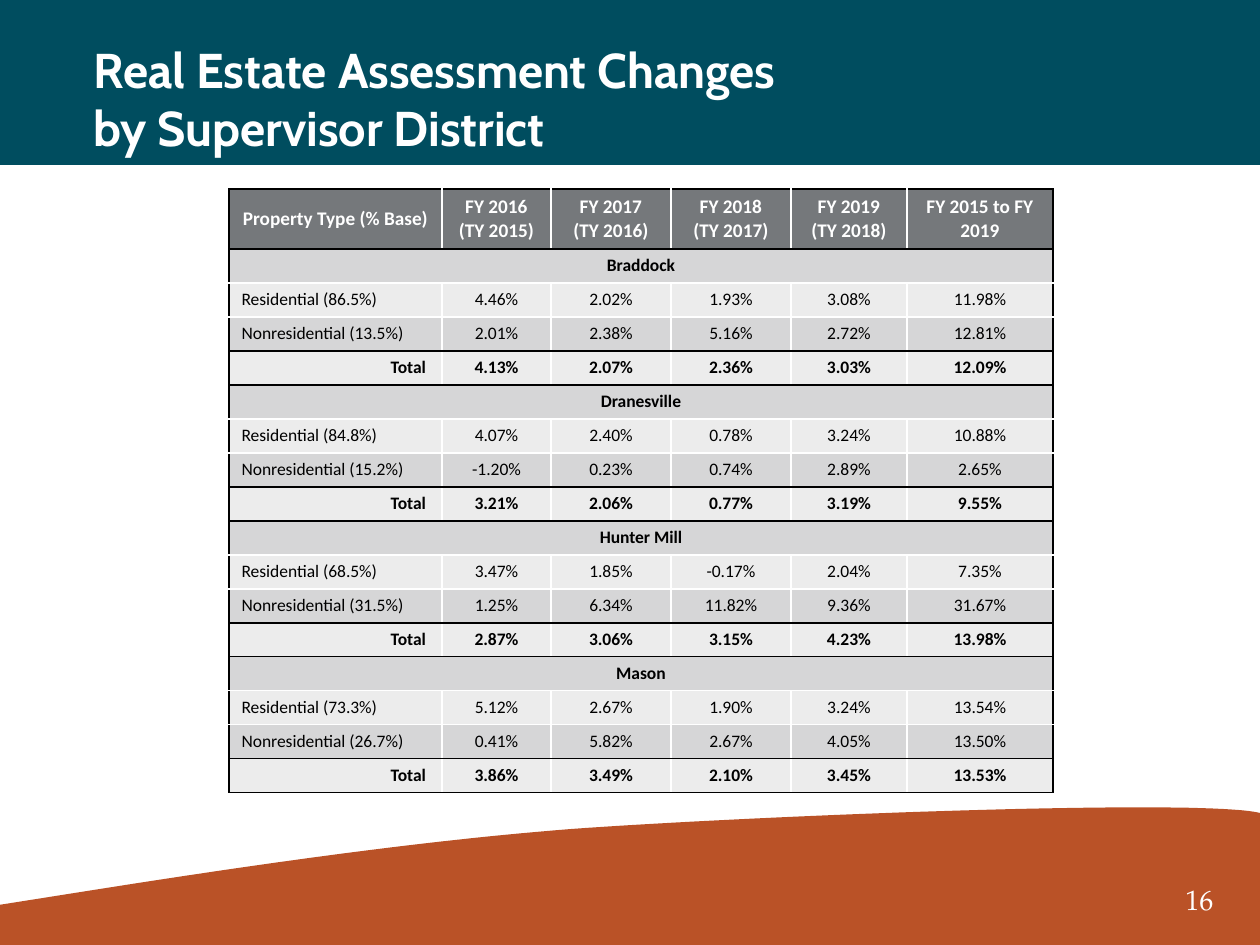
import dataclasses
import typing

import lxml.etree
import pptx
import pptx.dml.color
import pptx.enum.shapes
import pptx.enum.text
import pptx.oxml.ns
import pptx.util

EMU_PER_PX = pptx.util.Inches(1) / 126
ALIGN = pptx.enum.text.PP_ALIGN
MIDDLE = pptx.enum.text.MSO_ANCHOR.MIDDLE
TOP = pptx.enum.text.MSO_ANCHOR.TOP

WHITE, BLACK = "FFFFFF", "000000"
TEAL, RUST = "004D5F", "BA5227"
HEADER_GRAY, DARK_BAND, LIGHT_BAND = "75787B", "D6D6D7", "ECECEC"


@dataclasses.dataclass(frozen=True)
class District:
    name: str
    residential_share: str
    nonresidential_share: str
    residential: str
    nonresidential: str
    total: str


@dataclasses.dataclass(frozen=True)
class RowStyle:
    fill: str
    color: str
    size: int
    bold: bool
    label_align: typing.Any
    top: str
    bottom: str
    height: int = 34


HEADER = RowStyle(HEADER_GRAY, WHITE, 11, True, ALIGN.CENTER, BLACK, BLACK, 60)
NAME = RowStyle(DARK_BAND, BLACK, 10, True, ALIGN.CENTER, BLACK, WHITE)
RESIDENTIAL = RowStyle(LIGHT_BAND, BLACK, 10, False, ALIGN.LEFT, WHITE, WHITE)
NONRESIDENTIAL = RowStyle(DARK_BAND, BLACK, 10, False, ALIGN.LEFT, WHITE, BLACK)
TOTAL = RowStyle(LIGHT_BAND, BLACK, 10, True, ALIGN.RIGHT, BLACK, BLACK)

COLUMN_WIDTHS = [213, 109, 120, 120, 116, 146]
HEADINGS = ["Property Type (% Base)", "FY 2016\n(TY 2015)", "FY 2017\n(TY 2016)",
            "FY 2018\n(TY 2017)", "FY 2019\n(TY 2018)", "FY 2015 to FY 2019"]
DISTRICTS = [
    District("Braddock", "86.5%", "13.5%", "4.46% 2.02% 1.93% 3.08% 11.98%",
             "2.01% 2.38% 5.16% 2.72% 12.81%", "4.13% 2.07% 2.36% 3.03% 12.09%"),
    District("Dranesville", "84.8%", "15.2%", "4.07% 2.40% 0.78% 3.24% 10.88%",
             "-1.20% 0.23% 0.74% 2.89% 2.65%", "3.21% 2.06% 0.77% 3.19% 9.55%"),
    District("Hunter Mill", "68.5%", "31.5%", "3.47% 1.85% -0.17% 2.04% 7.35%",
             "1.25% 6.34% 11.82% 9.36% 31.67%", "2.87% 3.06% 3.15% 4.23% 13.98%"),
    District("Mason", "73.3%", "26.7%", "5.12% 2.67% 1.90% 3.24% 13.54%",
             "0.41% 5.82% 2.67% 4.05% 13.50%", "3.86% 3.49% 2.10% 3.45% 13.53%"),
]

WAVE_CURVES = [
    [(1260, 813), (1203, 799), (796, 814), (586, 828)],
    [(586, 828), (377, 843), (127, 885), (-1, 905)],
]


def px(length: float) -> int:
    return round(length * EMU_PER_PX)


def rgb(color: str) -> pptx.dml.color.RGBColor:
    return pptx.dml.color.RGBColor.from_string(color)


def paint(shape, color: str) -> None:
    shape.fill.solid()
    shape.fill.fore_color.rgb = rgb(color)
    shape.line.fill.background()
    shape.shadow.inherit = False


def format_text(text_frame, font: str, size: float, color: str, bold: bool, align) -> None:
    for paragraph in text_frame.paragraphs:
        paragraph.alignment = align
        for run in paragraph.runs:
            run.font.name = font
            run.font.size = pptx.util.Pt(size)
            run.font.bold = bold
            run.font.color.rgb = rgb(color)


def curve_points(curve, steps: int = 40) -> list:
    """Sample a cubic Bezier curve, leaving out its first point."""
    points = []
    for step in range(1, steps + 1):
        t = step / steps
        weights = ((1 - t) ** 3, 3 * t * (1 - t) ** 2, 3 * t * t * (1 - t), t ** 3)
        points.append(tuple(px(sum(weight * point[axis] for weight, point in zip(weights, curve)))
                            for axis in (0, 1)))
    return points


def add_wave(slide) -> None:
    builder = slide.shapes.build_freeform(0, px(945))
    builder.add_line_segments([(px(1260), px(945)), (px(1260), px(813))], close=False)
    for curve in WAVE_CURVES:
        builder.add_line_segments(curve_points(curve), close=False)
    builder.add_line_segments([], close=True)
    paint(builder.convert_to_shape(), RUST)


def add_header_band(slide) -> None:
    band = slide.shapes.add_shape(pptx.enum.shapes.MSO_SHAPE.RECTANGLE, 0, 0, px(1260), px(165))
    paint(band, TEAL)


def set_title(slide) -> None:
    title = slide.shapes.title
    slide.shapes.element.append(title.element)  # in front of the band
    title.left, title.top, title.width, title.height = px(81), px(33), px(1165), px(94)
    text_frame = title.text_frame
    text_frame.text = "Real Estate Assessment Changes\vby Supervisor District"
    text_frame.vertical_anchor = TOP
    text_frame.auto_size = pptx.enum.text.MSO_AUTO_SIZE.NONE
    format_text(text_frame, "Cabin", 27.9, WHITE, True, ALIGN.LEFT)


def add_page_number(slide) -> None:
    text_frame = slide.shapes.add_textbox(px(1168), px(869), px(63), px(60)).text_frame
    text_frame.text = "16"
    text_frame.word_wrap = True
    text_frame.vertical_anchor = MIDDLE
    text_frame.margin_left = text_frame.margin_right = px(6)
    format_text(text_frame, "TeX Gyre Pagella", 16, WHITE, False, ALIGN.CENTER)


def set_borders(cell, colors: dict) -> None:
    properties = cell._tc.get_or_add_tcPr()
    for position, (edge, color) in enumerate(colors.items()):
        line = lxml.etree.Element(pptx.oxml.ns.qn(f"a:{edge}"), w=str(pptx.util.Pt(1)))
        fill = lxml.etree.SubElement(line, pptx.oxml.ns.qn("a:solidFill"))
        lxml.etree.SubElement(fill, pptx.oxml.ns.qn("a:srgbClr"), val=color)
        properties.insert(position, line)


def fill_row(table, index: int, style: RowStyle, texts: list) -> None:
    table.rows[index].height = px(style.height)
    last = len(COLUMN_WIDTHS) - 1
    if style is NAME:
        table.cell(index, 0).merge(table.cell(index, last))
    for column, cell in enumerate(table.rows[index].cells):
        cell.fill.solid()
        cell.fill.fore_color.rgb = rgb(style.fill)
        cell.vertical_anchor = MIDDLE
        set_borders(cell, {"lnL": WHITE if column else BLACK,
                           "lnR": BLACK if column == last or style is NAME else WHITE,
                           "lnT": style.top, "lnB": style.bottom})
        if column < len(texts):
            cell.text_frame.text = texts[column]
            align = ALIGN.CENTER if column else style.label_align
            if align == ALIGN.RIGHT:
                cell.margin_right = px(16)
            format_text(cell.text_frame, "Calibri", style.size, style.color, style.bold, align)


def add_assessment_table(slide) -> None:
    rows = [(HEADER, HEADINGS)]
    for district in DISTRICTS:
        rows += [
            (NAME, [district.name]),
            (RESIDENTIAL, [f"Residential ({district.residential_share})",
                           *district.residential.split()]),
            (NONRESIDENTIAL, [f"Nonresidential ({district.nonresidential_share})",
                              *district.nonresidential.split()]),
            (TOTAL, ["Total", *district.total.split()]),
        ]
    height = sum(style.height for style, _ in rows)
    table = slide.shapes.add_table(len(rows), len(COLUMN_WIDTHS), px(229), px(189),
                                   px(sum(COLUMN_WIDTHS)), px(height)).table
    table.first_row = table.horz_banding = False
    for column, width in zip(table.columns, COLUMN_WIDTHS):
        column.width = px(width)
    for index, (style, texts) in enumerate(rows):
        fill_row(table, index, style, texts)


def main() -> None:
    presentation = pptx.Presentation()
    presentation.slide_width, presentation.slide_height = px(1260), px(945)
    slide = presentation.slides.add_slide(presentation.slide_layouts[5])
    add_wave(slide)
    add_header_band(slide)
    set_title(slide)
    add_page_number(slide)
    add_assessment_table(slide)
    presentation.save("out.pptx")


if __name__ == "__main__":
    main()
